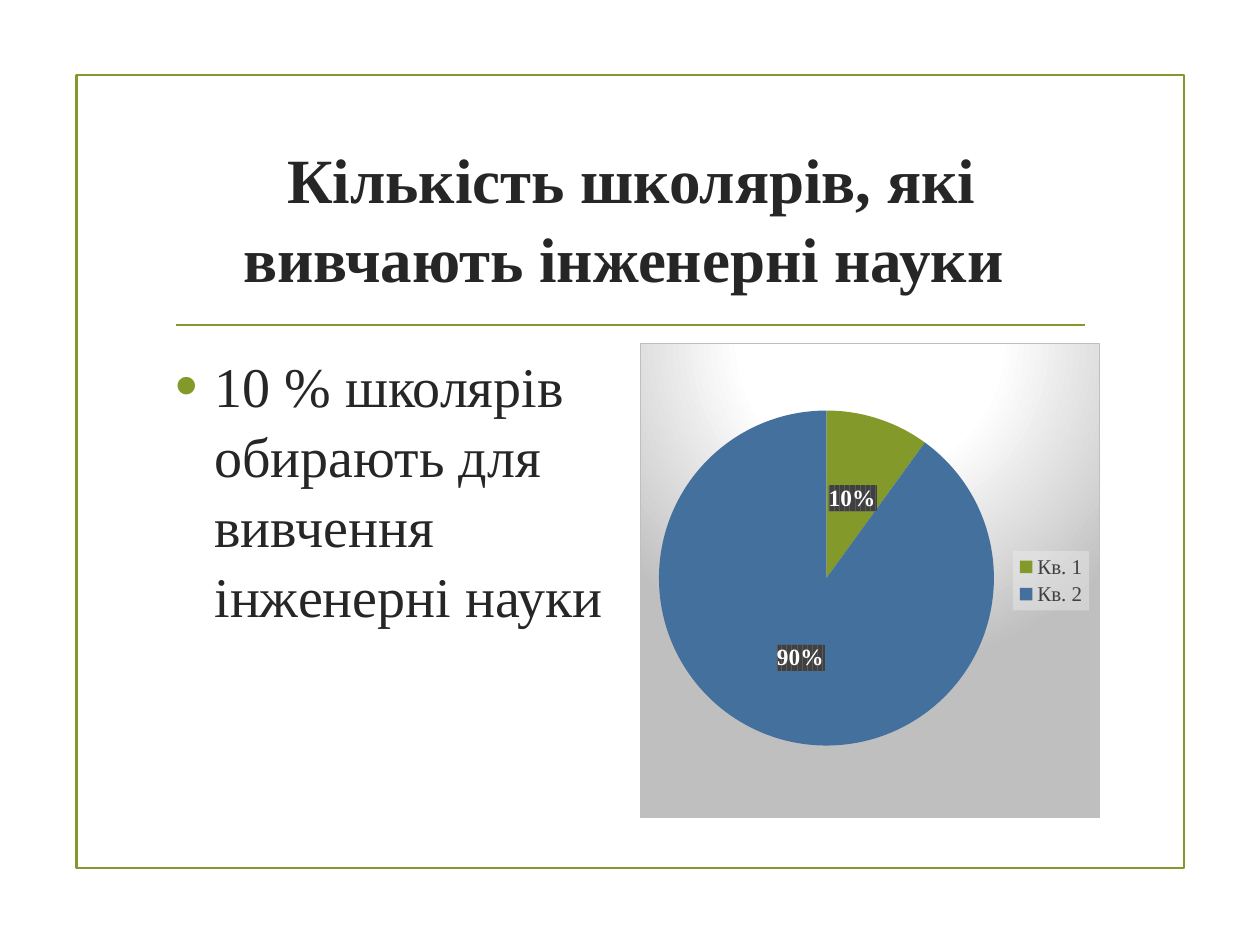
from lxml.etree import SubElement
from pptx import Presentation
from pptx.chart.data import CategoryChartData
from pptx.dml.color import RGBColor
from pptx.enum.chart import XL_CHART_TYPE, XL_LABEL_POSITION, XL_LEGEND_POSITION
from pptx.enum.shapes import MSO_CONNECTOR, MSO_SHAPE
from pptx.enum.text import MSO_ANCHOR, MSO_AUTO_SIZE, PP_ALIGN
from pptx.oxml import parse_xml
from pptx.oxml.ns import nsdecls, qn
from pptx.util import Pt

SOLID = '<a:solidFill><a:srgbClr val="{}"/></a:solidFill>'
BACKDROP = (
    '<a:gradFill><a:gsLst>'
    '<a:gs pos="0"><a:srgbClr val="FFFFFF"/></a:gs>'
    '<a:gs pos="39000"><a:srgbClr val="FFFFFF"/></a:gs>'
    '<a:gs pos="100000"><a:srgbClr val="BFBFBF"/></a:gs></a:gsLst>'
    '<a:path path="circle"><a:fillToRect l="50000" t="-80000" r="50000" b="180000"/></a:path>'
    '</a:gradFill><a:ln w="9525">' + SOLID.format("BFBFBF") + '</a:ln>'
)
LEGEND_FILL = (
    '<a:solidFill><a:srgbClr val="F2F2F2"><a:alpha val="39000"/></a:srgbClr></a:solidFill>'
)
LABEL_FILL = (
    '<a:pattFill prst="dkVert"><a:fgClr><a:srgbClr val="404040"/></a:fgClr>'
    '<a:bgClr><a:srgbClr val="595959"/></a:bgClr></a:pattFill>'
)


def color(value):
    return RGBColor.from_string(value)


def format_font(font, size, tone, bold=False, name="Times New Roman"):
    font.name = name
    font.size = Pt(size)
    font.bold = bold
    font.color.rgb = color(tone)


def write(para, text, spacing=1.04, align=PP_ALIGN.LEFT, **font_format):
    para.alignment = align
    para.line_spacing = spacing
    span = para.add_run()
    span.text = text
    format_font(span.font, **font_format)


def chart_properties(content):
    return parse_xml(f'<c:spPr {nsdecls("c", "a")}>{content}</c:spPr>')


class SlideBuilder:
    accent = "83992A"
    ink = "262626"

    def __init__(self, page):
        self.page = page

    def frame(self, left, top, width, height):
        box = self.page.shapes.add_shape(
            MSO_SHAPE.RECTANGLE, Pt(left), Pt(top), Pt(width), Pt(height))
        box.shadow.inherit = False
        box.fill.background()
        box.line.color.rgb = color(self.accent)
        box.line.width = Pt(1.25)

    def rule(self, left, right, top):
        line = self.page.shapes.add_connector(
            MSO_CONNECTOR.STRAIGHT, Pt(left), Pt(top), Pt(right), Pt(top))
        line.line.color.rgb = color(self.accent)
        line.line.width = Pt(1.25)
        SubElement(line._element.spPr, qn("a:effectLst"))

    def title(self, text, left, top, width, height):
        box = self.page.shapes.title
        box.left, box.top, box.width, box.height = Pt(left), Pt(top), Pt(width), Pt(height)
        box.text_frame.auto_size = MSO_AUTO_SIZE.NONE
        box.text_frame.vertical_anchor = MSO_ANCHOR.MIDDLE
        write(box.text_frame.paragraphs[0], text, align=PP_ALIGN.CENTER,
              size=36, tone=self.ink, bold=True)

    def bullet(self, text, left, top, width, height, indent=22.5):
        box = self.page.shapes.add_textbox(Pt(left), Pt(top), Pt(width), Pt(height))
        box.text_frame.word_wrap = True
        para = box.text_frame.paragraphs[0]
        properties = para._p.get_or_add_pPr()
        properties.set("marL", str(Pt(indent)))
        properties.set("indent", str(-Pt(indent)))
        bullet_color = SubElement(properties, qn("a:buClr"))
        SubElement(bullet_color, qn("a:srgbClr"), val=self.accent)
        SubElement(properties, qn("a:buSzPct"), val="115000")
        SubElement(properties, qn("a:buFont"), typeface="Arial")
        SubElement(properties, qn("a:buChar"), char="•")
        write(para, text, size=32, tone=self.ink)

    def pie(self, shares, tones, left, top, width, height):
        data = CategoryChartData()
        data.categories = list(shares)
        data.add_series("Series 1", list(shares.values()))
        chart = self.page.shapes.add_chart(
            XL_CHART_TYPE.PIE, Pt(left), Pt(top), Pt(width), Pt(height), data).chart
        format_font(chart.font, 10, "000000")
        chart.has_title = False
        plot = chart.plots[0]
        plot.vary_by_categories = True
        for index, tone in enumerate(tones):
            fill = plot.series[0].points[index].format.fill
            fill.solid()
            fill.fore_color.rgb = color(tone)
        self.pie_labels(plot.series[0].data_labels)
        self.pie_legend(chart)
        self.pie_area(chart)

    def pie_labels(self, labels):
        labels.show_percentage = True
        labels.show_value = False
        labels.show_legend_key = False
        labels.number_format = "0%"
        labels.number_format_is_linked = False
        labels.position = XL_LABEL_POSITION.CENTER
        format_font(labels.font, 13.3, "FFFFFF", bold=True)
        labels._element.find(qn("c:txPr")).addprevious(chart_properties(LABEL_FILL))

    def pie_legend(self, chart):
        chart.has_legend = True
        legend = chart.legend
        legend.position = XL_LEGEND_POSITION.RIGHT
        legend.include_in_layout = False
        format_font(legend.font, 12, "404040")
        legend._element.find(qn("c:txPr")).addprevious(chart_properties(LEGEND_FILL))

    def pie_area(self, chart):
        space = chart._chartSpace
        space.find(qn("c:chart")).addnext(chart_properties(BACKDROP))
        area = space.find(qn("c:chart")).find(qn("c:plotArea"))
        for old in area.findall(qn("c:layout")):
            area.remove(old)
        layout = parse_xml(f'<c:layout {nsdecls("c")}/>')
        manual = SubElement(layout, qn("c:manualLayout"))
        settings = {"layoutTarget": "inner", "xMode": "edge", "yMode": "edge",
                    "x": "0.04", "y": "0.14", "w": "0.73", "h": "0.71"}
        for tag, value in settings.items():
            SubElement(manual, qn(f"c:{tag}"), val=value)
        area.insert(0, layout)


def main():
    deck = Presentation()
    deck.slide_width, deck.slide_height = Pt(720), Pt(540)
    builder = SlideBuilder(deck.slides.add_slide(deck.slide_layouts[5]))
    left, top, width, height = 93, 196, 263, 271.5
    chart_left = 365.7
    builder.frame(43.7, 42.8, 633, 453.5)
    builder.rule(100.5, 620, 185.7)
    builder.title("Кількість школярів, які вивчають інженерні науки ",
                  left, 72, chart_left + width - left, 103)
    builder.bullet("10 % школярів обирають для вивчення інженерні науки",
                   left, top, width, height)
    builder.pie({"Кв. 1": 10, "Кв. 2": 90}, ["83992A", "44709D"],
                chart_left, top, width, height)
    deck.save("out.pptx")


if __name__ == "__main__":
    main()
